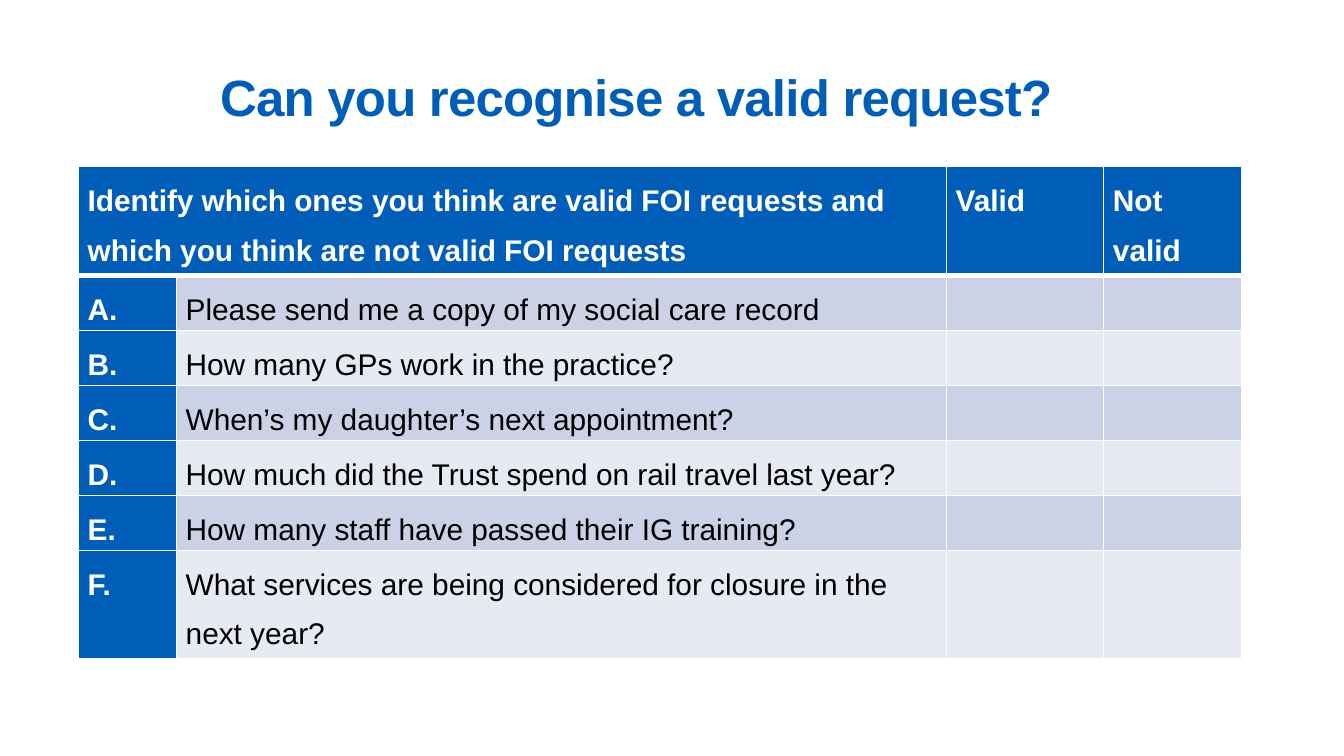
from lxml import etree
from pptx import Presentation
from pptx.dml.color import RGBColor
from pptx.enum.text import MSO_ANCHOR
from pptx.oxml.ns import qn
from pptx.util import Pt

MIDDLE = MSO_ANCHOR.MIDDLE
FONT = "Arial"
COLORS = {"blue": "005EB8", "white": "FFFFFF", "black": "000000",
          "band_dark": "CCD2E6", "band_light": "E7EAF3"}
HEADER = ["Identify which ones you think are valid FOI requests and "
          "which you think are not valid FOI requests", "", "Valid", "Not valid"]
REQUESTS = [
    "Please send me a copy of my social care record",
    "How many GPs work in the practice?",
    "When’s my daughter’s next appointment?",
    "How much did the Trust spend on rail travel last year?",
    "How many staff have passed their IG training?",
    "What services are being considered for closure in the next year?",
]
COLUMN_WIDTHS = [52.5, 412.5, 84.25, 74.25]
ROW_HEIGHT = 24


class SlideBuilder:
    def __init__(self, slide):
        self.s = slide

    def style_font(self, font, size, color, bold):
        font.name, font.size, font.bold = FONT, Pt(size), bold
        font.color.rgb = RGBColor.from_string(COLORS[color])

    def title(self, text, x, y, w, h):
        tf = self.s.shapes.add_textbox(Pt(x), Pt(y), Pt(w), Pt(h)).text_frame
        tf.word_wrap = True
        tf.vertical_anchor = MIDDLE
        tf.margin_left = tf.margin_right = tf.margin_top = tf.margin_bottom = 0
        tf.text = text
        r = tf.paragraphs[0].runs[0]
        self.style_font(r.font, 27.3, "blue", True)
        r.font._element.set("spc", "-40")

    def borders(self, cell, widths):
        """Draw white borders; widths maps L, R, T and B to points."""
        tc_pr = cell._tc.get_or_add_tcPr()
        for side, width in widths.items():
            ln = etree.SubElement(tc_pr, qn(f"a:ln{side}"), w=str(Pt(width)))
            fill = etree.SubElement(ln, qn("a:solidFill"))
            etree.SubElement(fill, qn("a:srgbClr"), val=COLORS["white"])

    def cell(self, cell, text, fill, strong, widths):
        cell.margin_left = cell.margin_right = Pt(5)
        cell.margin_top, cell.margin_bottom = Pt(0.7), 0
        self.borders(cell, widths)
        cell.fill.solid()
        cell.fill.fore_color.rgb = RGBColor.from_string(COLORS[fill])
        cell.text_frame.text = text
        p = cell.text_frame.paragraphs[0]
        p.line_spacing, p.space_after = 1.5, Pt(6)
        color = "white" if strong else "black"
        self.style_font(p.font, 16, color, strong)
        for r in p.runs:
            self.style_font(r.font, 16, color, strong)

    def table(self, rows, x, y, h):
        frame = self.s.shapes.add_table(len(rows), len(COLUMN_WIDTHS), Pt(x), Pt(y),
                                        Pt(sum(COLUMN_WIDTHS)), Pt(h))
        table = frame.table
        for column, width in zip(table.columns, COLUMN_WIDTHS):
            column.width = Pt(width)
        for i, texts in enumerate(rows):
            table.rows[i].height = Pt(ROW_HEIGHT)
            band = "band_dark" if i % 2 else "band_light"
            widths = {"L": 1, "R": 1, "T": 3 if i == 1 else 1, "B": 3 if i == 0 else 1}
            for j, text in enumerate(texts):
                strong = i == 0 or j == 0
                self.cell(table.cell(i, j), text, "blue" if strong else band,
                          strong, widths)
        table.cell(0, 0).merge(table.cell(0, 1))
        frame.height = Pt(h)


def main():
    prs = Presentation()
    prs.slide_width, prs.slide_height = Pt(720), Pt(405)
    builder = SlideBuilder(prs.slides.add_slide(prs.slide_layouts[6]))
    builder.title("Can you recognise a valid request?", 118, 32.4, 471, 38)
    rows = [HEADER] + [[f"{letter}.", request, "", ""]
                       for letter, request in zip("ABCDEF", REQUESTS)]
    builder.table(rows, 42, 89.25, 264)
    prs.save("out.pptx")


if __name__ == "__main__":
    main()
